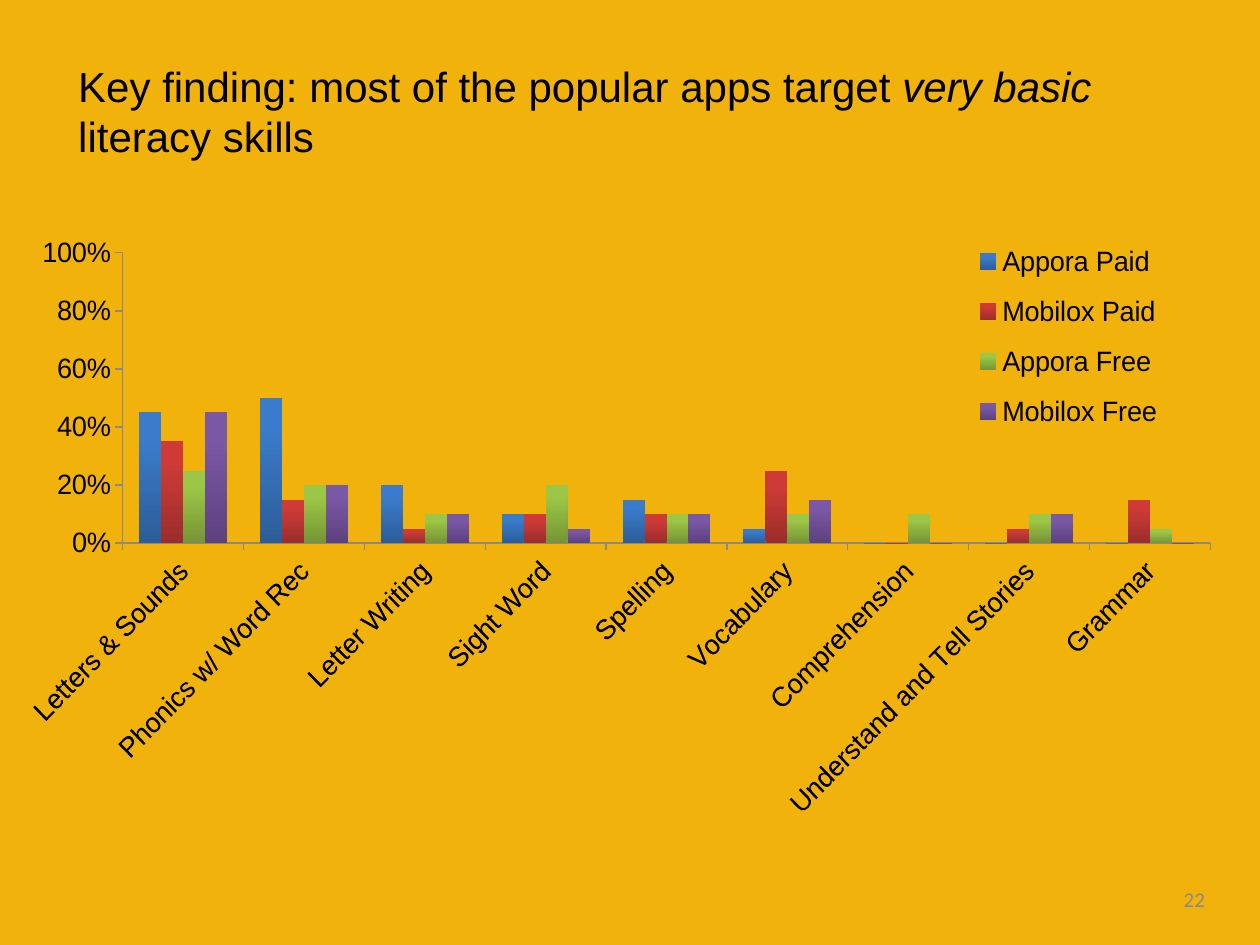
from dataclasses import dataclass

from lxml.etree import SubElement
from pptx import Presentation
from pptx.chart.axis import CategoryAxis, ValueAxis
from pptx.chart.chart import Chart
from pptx.chart.data import CategoryChartData
from pptx.dml.color import RGBColor
from pptx.enum.chart import XL_CHART_TYPE, XL_LEGEND_POSITION, XL_TICK_MARK
from pptx.enum.text import MSO_ANCHOR, MSO_AUTO_SIZE, PP_ALIGN
from pptx.oxml.ns import qn
from pptx.oxml.xmlchemy import OxmlElement
from pptx.slide import Slide
from pptx.text.text import Font
from pptx.util import Pt


@dataclass(frozen=True)
class Theme:
    background: str = "F2B20C"
    text: str = "000000"
    muted: str = "898989"
    font: str = "Arial"
    number_font: str = "Calibri"
    title_size: int = 24
    chart_size: int = 16
    number_size: int = 12


@dataclass(frozen=True)
class Box:
    """Place and size in points."""
    left: float
    top: float
    width: float
    height: float


@dataclass(frozen=True)
class SkillSeries:
    name: str
    percents: tuple[int, ...]
    dark: str
    light: str


THEME = Theme()
TITLE_BOX = Box(37.5, 31, 632, 65.5)
CHART_BOX = Box(15.8, 122.4, 696.2, 368.6)
NUMBER_BOX = Box(527.8, 499.7, 167.8, 28.8)

SKILLS = ("Letters & Sounds", "Phonics w/ Word Rec", "Letter Writing", "Sight Word",
          "Spelling", "Vocabulary", "Comprehension", "Understand and Tell Stories",
          "Grammar")
SERIES = (
    SkillSeries("Appora Paid", (45, 50, 20, 10, 15, 5, 0, 0, 0), "2C5D98", "3A7CCB"),
    SkillSeries("Mobilox Paid", (35, 15, 5, 10, 10, 25, 0, 5, 15), "9B2D2A", "CE3B37"),
    SkillSeries("Appora Free", (25, 20, 10, 20, 10, 10, 10, 10, 5), "769535", "9CC746"),
    SkillSeries("Mobilox Free", (45, 20, 10, 5, 10, 15, 0, 10, 0), "5D417E", "7B58A6"),
)


def style_font(font: Font, name: str, size: int, color: str) -> None:
    font.name = name
    font.size = Pt(size)
    font.color.rgb = RGBColor.from_string(color)


def add_title(slide: Slide, box: Box) -> None:
    title = slide.shapes.title
    title.left, title.top = Pt(box.left), Pt(box.top)
    title.width, title.height = Pt(box.width), Pt(box.height)
    frame = title.text_frame
    frame.word_wrap = True
    frame.auto_size = MSO_AUTO_SIZE.SHAPE_TO_FIT_TEXT
    frame.vertical_anchor = MSO_ANCHOR.TOP
    paragraph = frame.paragraphs[0]
    paragraph.alignment = PP_ALIGN.LEFT
    style_font(paragraph.font, THEME.font, THEME.title_size, THEME.text)
    for text, italic in (("Key finding: most of the popular apps target ", False),
                         ("very basic ", True), ("literacy skills", False)):
        run = paragraph.add_run()
        run.text = text
        run.font.italic = italic


def add_slide_number(slide: Slide, box: Box, number: str) -> None:
    shape = slide.shapes.add_textbox(Pt(box.left), Pt(box.top), Pt(box.width), Pt(box.height))
    frame = shape.text_frame
    frame.word_wrap = True
    frame.vertical_anchor = MSO_ANCHOR.MIDDLE
    paragraph = frame.paragraphs[0]
    paragraph.text = number
    paragraph.alignment = PP_ALIGN.RIGHT
    style_font(paragraph.font, THEME.number_font, THEME.number_size, THEME.muted)


def set_layout(element, index: int, x: float, y: float, width: float, height: float,
               inner: bool = False) -> None:
    """Place a plot area or legend by fractions of the chart; index orders the XML child."""
    layout = element.find(qn("c:layout"))
    if layout is None:
        layout = OxmlElement("c:layout")
        element.insert(index, layout)
    for child in list(layout):
        layout.remove(child)
    manual = SubElement(layout, qn("c:manualLayout"))
    values = [("layoutTarget", "inner")] if inner else []
    values += [("xMode", "edge"), ("yMode", "edge"),
               ("x", x), ("y", y), ("w", width), ("h", height)]
    for tag, value in values:
        SubElement(manual, qn(f"c:{tag}")).set("val", str(value))


def style_axis(axis: CategoryAxis | ValueAxis) -> None:
    axis.has_major_gridlines = False
    axis.major_tick_mark = XL_TICK_MARK.OUTSIDE
    axis.minor_tick_mark = XL_TICK_MARK.NONE
    axis.format.line.color.rgb = RGBColor.from_string(THEME.muted)
    axis.format.line.width = Pt(0.75)
    style_font(axis.tick_labels.font, THEME.font, THEME.chart_size, THEME.text)


def style_series(chart: Chart) -> None:
    plot = chart.plots[0]
    plot.gap_width = 150
    plot.overlap = 0
    plot.vary_by_categories = False
    for series, style in zip(plot.series, SERIES):
        series.invert_if_negative = False
        fill = series.format.fill
        fill.gradient()
        fill.gradient_angle = 90
        dark, light = fill.gradient_stops
        dark.color.rgb = RGBColor.from_string(style.dark)
        light.color.rgb = RGBColor.from_string(style.light)
        light.position = 0.8


def add_skills_chart(slide: Slide, box: Box) -> None:
    data = CategoryChartData(number_format="0%")
    data.categories = SKILLS
    for series in SERIES:
        data.add_series(series.name, [percent / 100 for percent in series.percents])
    chart = slide.shapes.add_chart(XL_CHART_TYPE.COLUMN_CLUSTERED, Pt(box.left), Pt(box.top),
                                   Pt(box.width), Pt(box.height), data).chart
    style_font(chart.font, THEME.font, THEME.chart_size, THEME.text)
    chart.has_title = False
    style_series(chart)

    style_axis(chart.category_axis)
    style_axis(chart.value_axis)
    labels = chart.category_axis._element.find(qn("c:txPr"))
    labels.find(qn("a:bodyPr")).set("rot", "-2700000")
    chart.value_axis.minimum_scale = 0
    chart.value_axis.maximum_scale = 1
    chart.value_axis.major_unit = 0.2
    chart.value_axis.tick_labels.number_format = "0%"
    chart.value_axis.tick_labels.number_format_is_linked = False

    chart.has_legend = True
    legend = chart.legend
    legend.position = XL_LEGEND_POSITION.RIGHT
    legend.include_in_layout = False
    style_font(legend.font, THEME.font, THEME.chart_size, THEME.text)
    set_layout(legend._element, 1, 0.76, 0.02, 0.18, 0.34)
    plot_area = chart._chartSpace.chart.plotArea
    set_layout(plot_area, 0, 0.05, 0.06, 0.92, 0.45, inner=True)


def main() -> None:
    presentation = Presentation()
    presentation.slide_width, presentation.slide_height = Pt(720), Pt(540)
    slide = presentation.slides.add_slide(presentation.slide_layouts.get_by_name("Title Only"))
    slide.background.fill.solid()
    slide.background.fill.fore_color.rgb = RGBColor.from_string(THEME.background)
    add_slide_number(slide, NUMBER_BOX, "22")
    add_title(slide, TITLE_BOX)
    add_skills_chart(slide, CHART_BOX)
    presentation.save("out.pptx")


if __name__ == "__main__":
    main()
